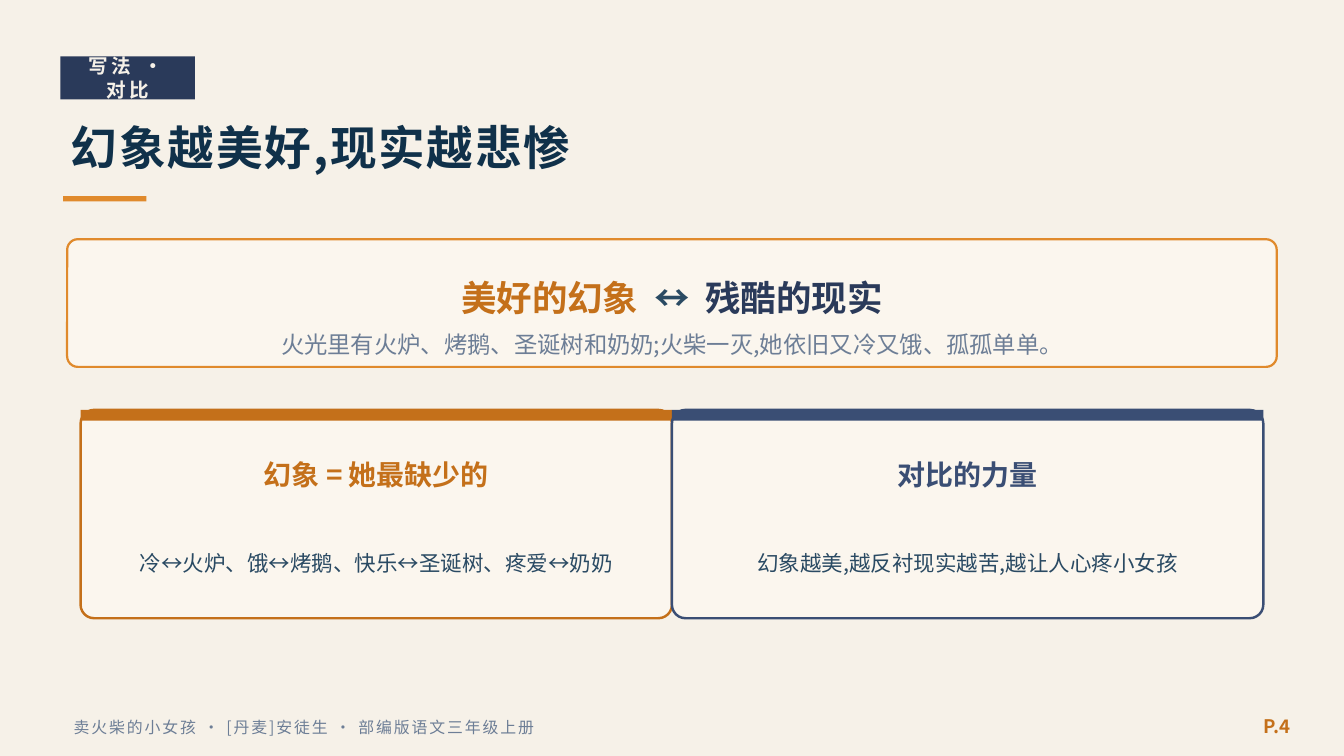
from pptx import Presentation
from pptx.dml.color import RGBColor
from pptx.enum import shapes, text
from pptx.oxml.ns import qn
from pptx.util import Pt

FONT = "Noto Sans CJK SC"
PAPER = RGBColor(0xF6, 0xF1, 0xE8)
CARD = RGBColor(0xFB, 0xF6, 0xEE)
NAVY = RGBColor(0x2A, 0x3A, 0x5A)
INK = RGBColor(0x10, 0x31, 0x4A)
TEAL = RGBColor(0x2A, 0x4A, 0x63)
SLATE = RGBColor(0x6D, 0x7E, 0x96)
BLUE = RGBColor(0x3A, 0x4E, 0x74)
AMBER = RGBColor(0xE0, 0x8A, 0x2C)
RUST = RGBColor(0xC4, 0x70, 0x1A)

LEFT, CENTER, RIGHT = text.PP_ALIGN.LEFT, text.PP_ALIGN.CENTER, text.PP_ALIGN.RIGHT

deck = Presentation()
deck.slide_width, deck.slide_height = Pt(720), Pt(405)
slide = deck.slides.add_slide(deck.slide_layouts[6])
slide.background.fill.solid()
slide.background.fill.fore_color.rgb = PAPER


def add_text(runs, left, top, width, height, *, size, color=None, bold=False,
             align=CENTER, spacing=0, line_height=None):
    """Add a text box; runs is a string or a list of (words, color, spacing)."""
    box = slide.shapes.add_textbox(Pt(left), Pt(top), Pt(width), Pt(height))
    frame = box.text_frame
    frame.word_wrap = True
    frame.vertical_anchor = text.MSO_ANCHOR.MIDDLE
    paragraph = frame.paragraphs[0]
    paragraph.alignment = align
    if line_height:
        paragraph.line_spacing = Pt(line_height)
    if isinstance(runs, str):
        runs = [(runs, color, spacing)]
    for words, run_color, run_spacing in runs:
        run = paragraph.add_run()
        run.text = words
        run.font.size, run.font.bold, run.font.name = Pt(size), bold, FONT
        run.font.color.rgb = run_color
        properties = run.font._element
        east_asian = properties.makeelement(qn("a:ea"), {"typeface": FONT})
        properties.find(qn("a:latin")).addnext(east_asian)
        if run_spacing:
            properties.set("spc", str(round(run_spacing * 100)))


def add_panel(left, top, width, height, fill, *, border=None, border_width=0, radius=None):
    kind = shapes.MSO_SHAPE.ROUNDED_RECTANGLE if radius else shapes.MSO_SHAPE.RECTANGLE
    panel = slide.shapes.add_shape(kind, Pt(left), Pt(top), Pt(width), Pt(height))
    panel.shadow.inherit = False
    panel.fill.solid()
    panel.fill.fore_color.rgb = fill
    if radius:
        panel.adjustments[0] = radius / min(width, height)
    if border:
        panel.line.color.rgb = border
        panel.line.width = Pt(border_width)
    else:
        panel.line.fill.background()


# Heading
add_panel(32.4, 30.24, 72, 23.04, NAVY)
add_text("写法 · 对比", 32.4, 29.52, 72, 24.48, size=10.5, color=PAPER, bold=True, spacing=2)
add_text("幻象越美好,现实越悲惨", 30.96, 56.16, 648, 44.64,
         size=25, color=INK, bold=True, align=LEFT, spacing=1)
add_panel(33.84, 105.12, 44.64, 2.88, AMBER)

# Central contrast
add_panel(36, 128.16, 648, 68.4, CARD, border=AMBER, border_width=1.2, radius=5.75)
gap = (" ", TEAL, 4.25)
add_text([("美好的幻象", RUST, 0), gap, ("↔", TEAL, 0), gap, ("残酷的现实", NAVY, 0)],
         36, 141.12, 648, 36, size=19, bold=True)
add_text("火光里有火炉、烤鹅、圣诞树和奶奶;火柴一灭,她依旧又冷又饿、孤孤单单。",
         36, 172.8, 648, 23.04, size=12.5, color=SLATE)

# Two cards side by side
CARD_LEFT, CARD_TOP, CARD_WIDTH, CARD_HEIGHT = 43.2, 219.6, 316.8, 111.6
PADDING = 18
cards = [
    ("幻象 = 她最缺少的", "冷↔火炉、饿↔烤鹅、快乐↔圣诞树、疼爱↔奶奶", RUST),
    ("对比的力量", "幻象越美,越反衬现实越苦,越让人心疼小女孩", BLUE),
]
for column, (heading, detail, accent) in enumerate(cards):
    left = CARD_LEFT + column * CARD_WIDTH
    add_panel(left, CARD_TOP, CARD_WIDTH, CARD_HEIGHT, CARD,
              border=accent, border_width=1.3, radius=7.25)
    add_panel(left, CARD_TOP, CARD_WIDTH, 5.76, accent)
    add_text(heading, left, CARD_TOP + 16.56, CARD_WIDTH, 36, size=15, color=accent, bold=True)
    add_text(detail, left + PADDING, CARD_TOP + 57.6, CARD_WIDTH - 2 * PADDING, 46.8,
             size=11.5, color=TEAL, line_height=16)

# Footer
add_text("卖火柴的小女孩 · [丹麦]安徒生 · 部编版语文三年级上册", 32.4, 378.72, 518.4, 21.6,
         size=8.5, color=SLATE, align=LEFT, spacing=1)
add_text("P.4", 655.2, 377.28, 43.2, 23.04, size=10, color=RUST, bold=True, align=RIGHT)

deck.save("out.pptx")
